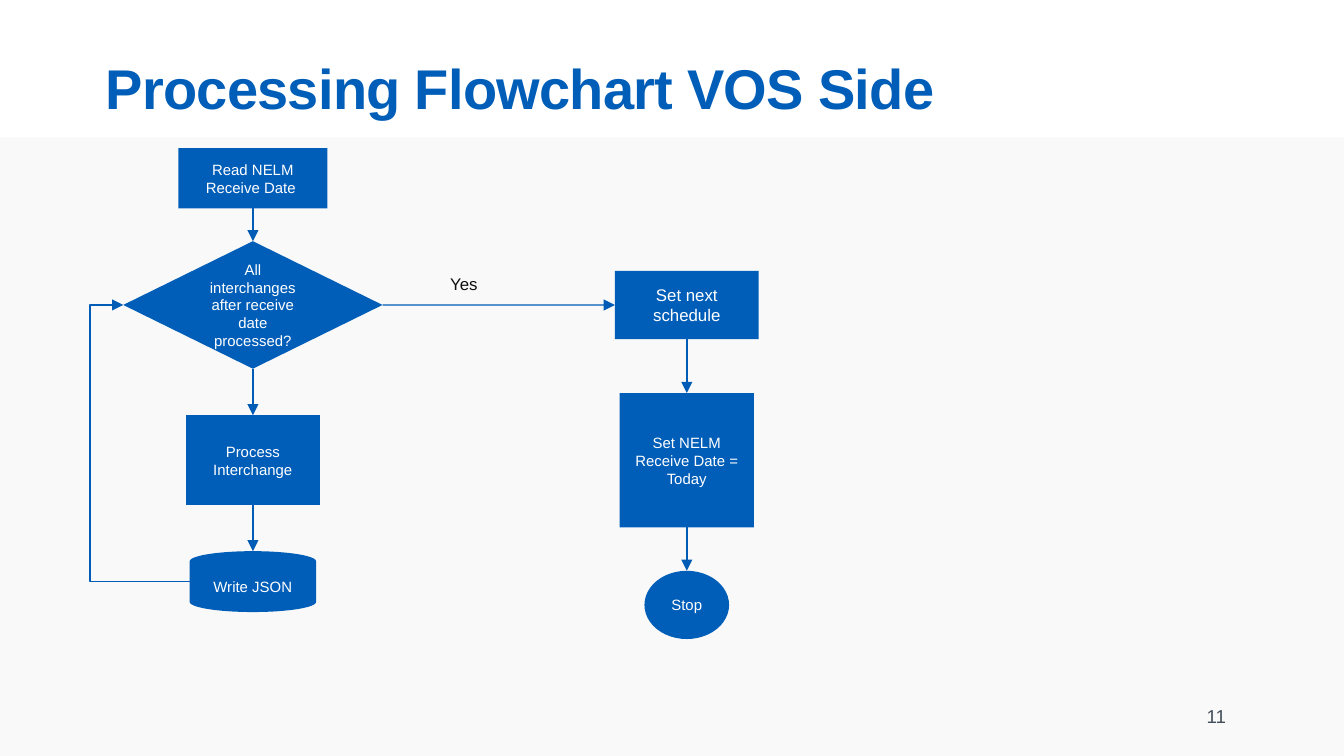
from lxml import etree
from pptx import Presentation
from pptx.dml.color import RGBColor
from pptx.enum.shapes import MSO_CONNECTOR as CONN, MSO_SHAPE as SHAPE
from pptx.enum.text import MSO_ANCHOR as ANCHOR, MSO_AUTO_SIZE as AUTO, PP_ALIGN as ALIGN
from pptx.oxml.ns import qn
from pptx.util import Cm, Pt

COLORS = {"blue": "005EB8", "line": "005CB4", "panel": "F9F9F9",
          "white": "FFFFFF", "grey": "424D58", "ink": "0F0F0F"}
TOP, LEFT, BOTTOM, RIGHT = range(4)


def write(sp, text, size, color, align=ALIGN.LEFT, bold=None, **frame):
    """Put one run of text in a shape; frame holds text frame settings."""
    tf = sp.text_frame
    for name, value in {"word_wrap": True, **frame}.items():
        setattr(tf, name, value)
    p = tf.paragraphs[0]
    p.alignment = align
    r = p.add_run()
    r.text = text
    for name, value in {"name": "Arial", "size": Pt(size), "bold": bold}.items():
        setattr(r.font, name, value)
    r.font.color.rgb = RGBColor.from_string(COLORS[color])
    return r


def add_arrow(kind, x1, y1, x2, y2):
    cx = s.shapes.add_connector(kind, x1, y1, x2, y2)
    cx.line.width = Pt(0.75)
    cx.line.color.rgb = RGBColor.from_string(COLORS["line"])
    etree.SubElement(cx.line._get_or_add_ln(), qn("a:tailEnd"), type="triangle")
    etree.SubElement(cx._element.spPr, qn("a:effectLst"))
    return cx


prs = Presentation()
prs.slide_width, prs.slide_height = Cm(25.4), Cm(14.29)
s = prs.slides.add_slide(prs.slide_layouts[6])

# Panel, title and page number
panel = s.shapes.add_shape(SHAPE.RECTANGLE, 0, Cm(2.6), prs.slide_width, Cm(11.69))
panel.shadow.inherit = False
panel.fill.solid()
panel.fill.fore_color.rgb = RGBColor.from_string(COLORS["panel"])
panel.line.fill.background()

title = s.shapes.add_textbox(Cm(2), Cm(0.9), Cm(21.2), Cm(1.48))
r = write(title, "Processing Flowchart VOS Side", 30, "blue", bold=True,
          vertical_anchor=ANCHOR.MIDDLE,
          margin_left=0, margin_top=0, margin_right=0, margin_bottom=0)
r.font._element.set("spc", "-40")

number = s.shapes.add_textbox(Cm(17.5), Cm(13.15), Cm(5.92), Cm(0.76))
write(number, "11", 10, "grey", ALIGN.RIGHT, vertical_anchor=ANCHOR.MIDDLE)

# Flowchart steps: key, shape, column centre, top, width, height, text, size
MAIN, END = 4.78, 12.98
steps = [
    ("read", SHAPE.RECTANGLE, MAIN, 2.8, 2.82, 1.14, "Read NELM Receive Date ", 8),
    ("check", SHAPE.FLOWCHART_DECISION, MAIN, 4.56, 4.9, 2.41,
     "All interchanges after receive date processed?", 8),
    ("process", SHAPE.FLOWCHART_PROCESS, MAIN, 7.85, 2.54, 1.7, "Process Interchange", 8),
    ("json", SHAPE.FLOWCHART_MAGNETIC_DISK, MAIN, 10.42, 2.39, 1.15, "Write JSON", 8),
    ("schedule", SHAPE.RECTANGLE, END, 5.12, 2.72, 1.29, "Set next schedule", 9),
    ("date", SHAPE.RECTANGLE, END, 7.43, 2.54, 2.54, "Set NELM Receive Date = Today", 8),
    ("stop", SHAPE.OVAL, END, 10.79, 1.6, 1.29, "Stop", 8),
]
nodes = {}
for key, shape, center, top, width, height, text, size in steps:
    sp = s.shapes.add_shape(shape, Cm(center - width / 2), Cm(top), Cm(width), Cm(height))
    sp.shadow.inherit = False
    sp.fill.solid()
    sp.fill.fore_color.rgb = RGBColor.from_string(COLORS["blue"])
    sp.line.fill.background()
    write(sp, text, size, "white", ALIGN.CENTER, vertical_anchor=ANCHOR.MIDDLE)
    nodes[key] = sp

# Straight arrows down each column, and across on "Yes"
links = [("read", "check"), ("check", "process"), ("process", "json"),
         ("schedule", "date"), ("date", "stop")]
for start, end in links:
    a, b = nodes[start], nodes[end]
    x = a.left + a.width // 2
    cx = add_arrow(CONN.STRAIGHT, x, a.top + a.height, x, b.top)
    cx.begin_connect(a, BOTTOM)
    if end != "json":  # a disk numbers its connection sites differently
        cx.end_connect(b, TOP)

check, schedule, json = nodes["check"], nodes["schedule"], nodes["json"]
y = check.top + check.height // 2
cx = add_arrow(CONN.STRAIGHT, check.left + check.width, y, schedule.left, y)
cx.begin_connect(check, RIGHT)
cx.end_connect(schedule, LEFT)

# Loop back from the disk, bending left of the decision
loop = add_arrow(CONN.ELBOW, json.left, json.top + json.height // 2, check.left, y)
guides = loop._element.spPr.find(qn("a:prstGeom")).get_or_add_avLst()
etree.SubElement(guides, qn("a:gd"), name="adj1", fmla="val 150200")

label = s.shapes.add_textbox(Cm(8.26), Cm(5.05), Cm(1.07), Cm(0.64))
write(label, "Yes", 9, "ink", word_wrap=False, auto_size=AUTO.SHAPE_TO_FIT_TEXT)

prs.save("out.pptx")
